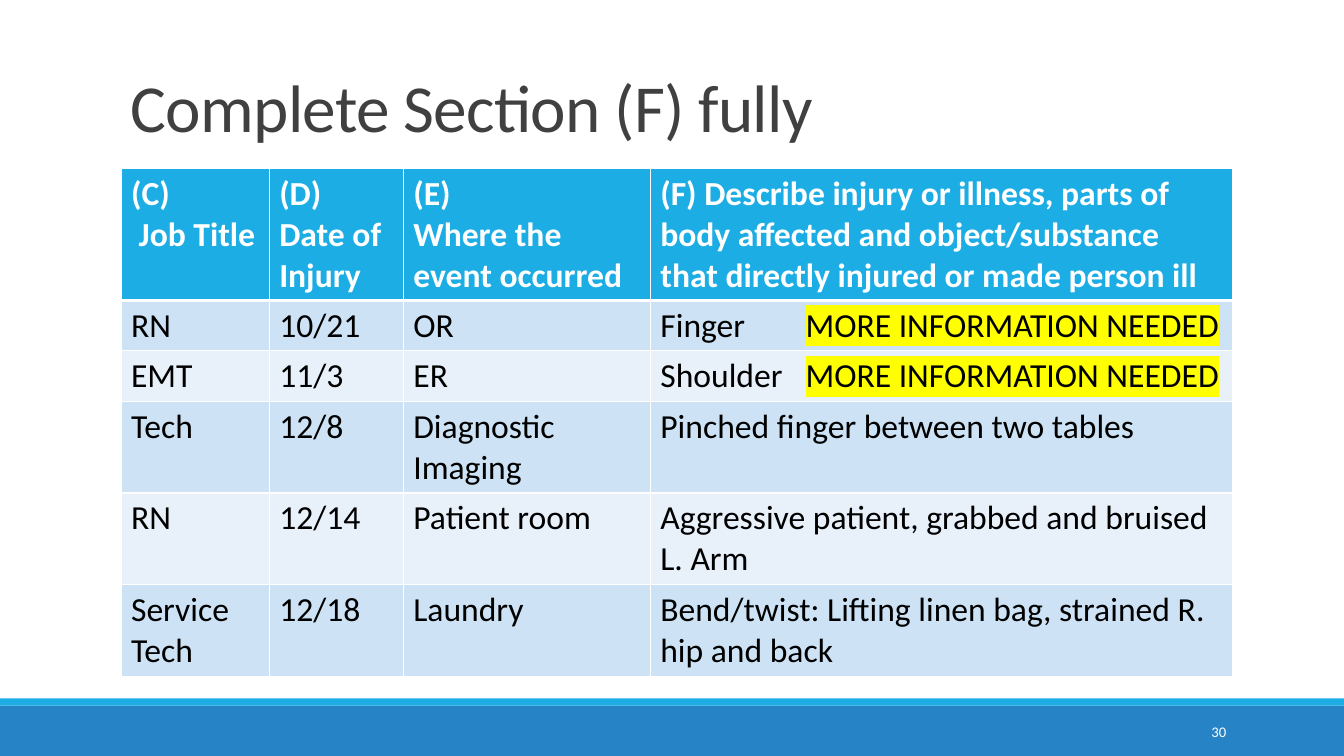
from lxml.etree import SubElement
from pptx import Presentation
from pptx.dml.color import RGBColor
from pptx.enum.shapes import MSO_SHAPE
from pptx.enum.text import MSO_ANCHOR, PP_ALIGN
from pptx.oxml import parse_xml
from pptx.oxml.ns import qn
from pptx.util import Inches, Pt

COLORS = {
    "header": "1CADE4",
    "footer": "2683C6",
    "title": "404040",
    "white": "FFFFFF",
    "black": "000000",
    "odd_row": "CDE3F5",
    "even_row": "E8F1FA",
    "highlight": "FFFF00",
}
NAMESPACE = "http://schemas.openxmlformats.org/drawingml/2006/main"
NEEDED = "MORE INFORMATION NEEDED"
COLUMN_WIDTHS = [1.47, 1.33, 2.45, 5.78]
ROW_HEIGHTS = [1.31, 0.5, 0.5, 0.91, 0.91, 0.91]
INJURY_LOG = [
    [
        "(C)\n Job Title",
        "(D) Date of Injury",
        "(E)\nWhere the event occurred",
        "(F) Describe injury or illness, parts of body affected and "
        "object/substance that directly injured or made person ill",
    ],
    ["RN", "10/21", "OR", "Finger\t" + NEEDED],
    ["EMT", "11/3", "ER", "Shoulder\t" + NEEDED],
    ["Tech", "12/8", "Diagnostic Imaging", "Pinched finger between two tables"],
    ["RN", "12/14", "Patient room", "Aggressive patient, grabbed and bruised L. Arm"],
    ["Service Tech", "12/18", "Laundry",
     "Bend/twist: Lifting linen bag, strained R. hip and back"],
]


class SlideBuilder:
    font_name = "Calibri"

    def __init__(self, slide):
        self.slide = slide

    def color(self, name):
        return RGBColor.from_string(COLORS[name])

    def style(self, run, size, color, bold=False):
        run.font.name = self.font_name
        run.font.size = Pt(size)
        run.font.bold = bold
        run.font.color.rgb = self.color(color)

    def bar(self, top, height, color):
        band = self.slide.shapes.add_shape(
            MSO_SHAPE.RECTANGLE, 0, Inches(top), Inches(13.33), Inches(height))
        band.shadow.inherit = False
        band.fill.solid()
        band.fill.fore_color.rgb = self.color(color)
        band.line.fill.background()

    def text(self, box, words, size, color, anchor, align=PP_ALIGN.LEFT,
             line_spacing=1.0, tracking=0):
        frame = self.slide.shapes.add_textbox(*map(Inches, box)).text_frame
        frame.word_wrap = True
        frame.vertical_anchor = anchor
        frame.text = words
        paragraph = frame.paragraphs[0]
        paragraph.alignment = align
        paragraph.line_spacing = line_spacing
        run = paragraph.runs[0]
        self.style(run, size, color)
        run.font._element.set("spc", str(tracking))

    def highlighted_note(self, paragraph, note):
        tabs = SubElement(paragraph._p.get_or_add_pPr(), qn("a:tabLst"))
        SubElement(tabs, qn("a:tab"), pos=str(Inches(1.44)), algn="l")
        run = paragraph.add_run()
        run.text = note
        self.style(run, 24, "black")
        run.font._element.find(qn("a:solidFill")).addnext(parse_xml(
            f'<a:highlight xmlns:a="{NAMESPACE}">'
            f'<a:srgbClr val="{COLORS["highlight"]}"/></a:highlight>'))

    def borders(self, cell, bottom):
        properties = cell._tc.get_or_add_tcPr()
        widths = {"lnL": 1, "lnR": 1, "lnT": 1, "lnB": bottom}
        for index, (edge, width) in enumerate(widths.items()):
            properties.insert(index, parse_xml(
                f'<a:{edge} xmlns:a="{NAMESPACE}" w="{Pt(width)}"><a:solidFill>'
                f'<a:srgbClr val="{COLORS["white"]}"/></a:solidFill></a:{edge}>'))

    def cell(self, cell, words, fill, color, is_header):
        label, tab, note = words.partition("\t")
        cell.text_frame.text = label + tab
        for paragraph in cell.text_frame.paragraphs:
            for run in paragraph.runs:
                self.style(run, 24, color, is_header)
        if note:
            self.highlighted_note(cell.text_frame.paragraphs[0], note)
        cell.fill.solid()
        cell.fill.fore_color.rgb = self.color(fill)
        self.borders(cell, 3 if is_header else 1)

    def table(self, left, top, widths, heights, rows):
        grid = self.slide.shapes.add_table(
            len(rows), len(widths), Inches(left), Inches(top),
            Inches(sum(widths)), Inches(sum(heights))).table
        for column, width in zip(grid.columns, widths):
            column.width = Inches(width)
        for index, (row, height, entries) in enumerate(zip(grid.rows, heights, rows)):
            row.height = Inches(height)
            is_header = index == 0
            band = "odd_row" if index % 2 else "even_row"
            for cell, words in zip(row.cells, entries):
                self.cell(cell, words, "header" if is_header else band,
                          "white" if is_header else "black", is_header)


def main():
    deck = Presentation()
    deck.slide_width = Inches(13.33)
    deck.slide_height = Inches(7.5)
    builder = SlideBuilder(deck.slides.add_slide(deck.slide_layouts[6]))
    builder.bar(7, 0.5, "footer")
    builder.bar(6.93, 0.07, "header")
    builder.text((1.2, 0.31, 11, 1.19), "Complete Section (F) fully", 48, "title",
                 MSO_ANCHOR.BOTTOM, line_spacing=0.85, tracking=-50)
    builder.table(1.2, 1.67, COLUMN_WIDTHS, ROW_HEIGHTS, INJURY_LOG)
    builder.text((10.83, 7.06, 1.43, 0.4), "30", 10.5, "white",
                 MSO_ANCHOR.MIDDLE, PP_ALIGN.RIGHT)
    deck.save("out.pptx")


if __name__ == "__main__":
    main()
